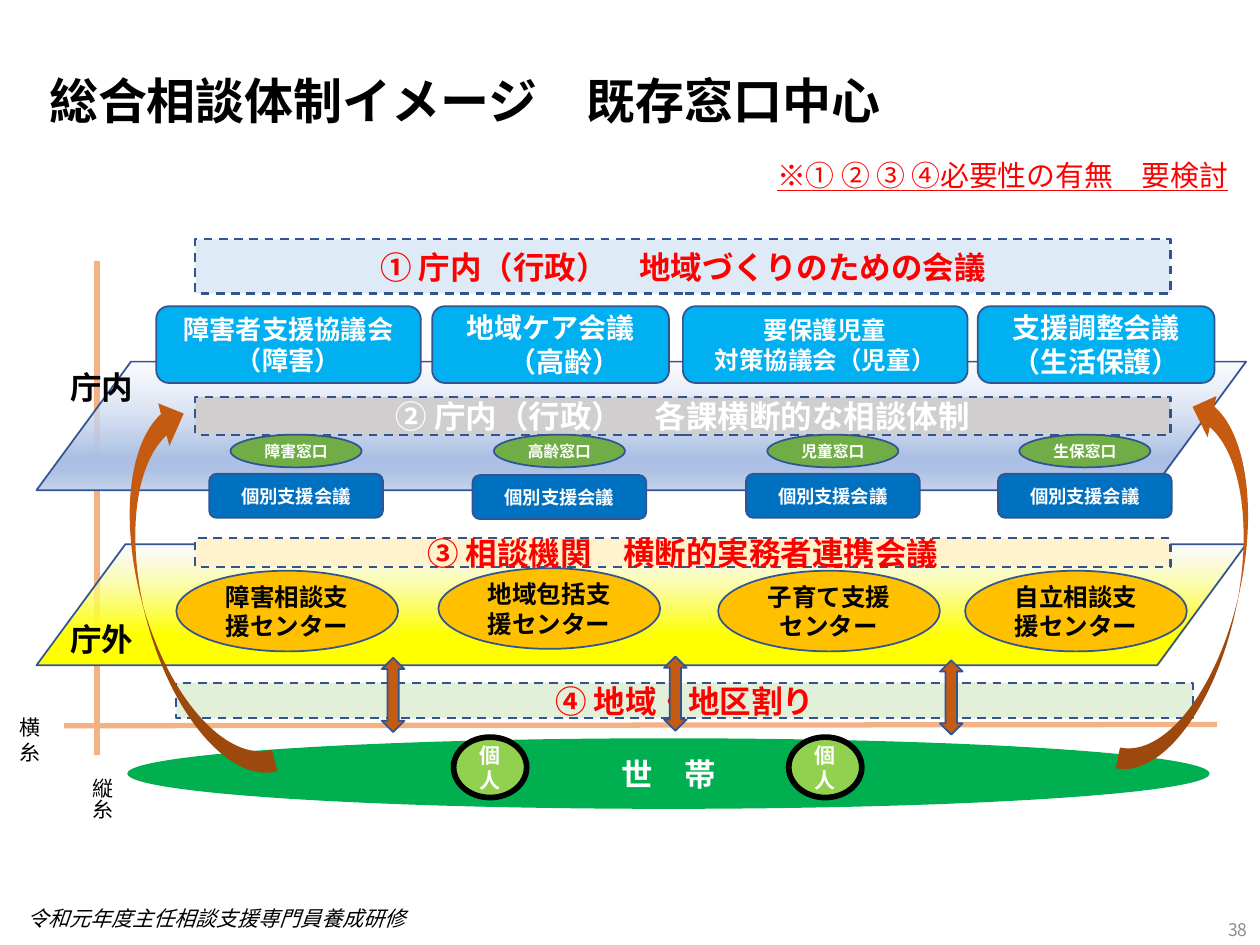
from dataclasses import dataclass

from lxml import etree
from pptx import Presentation
from pptx.dml.color import RGBColor
from pptx.enum.dml import MSO_LINE
from pptx.enum.shapes import MSO_CONNECTOR, MSO_SHAPE
from pptx.enum.text import MSO_ANCHOR, PP_ALIGN
from pptx.oxml.ns import qn
from pptx.util import Emu, Pt

RECT = MSO_SHAPE.RECTANGLE
ROUND = MSO_SHAPE.ROUNDED_RECTANGLE
OVAL = MSO_SHAPE.OVAL
SLANT = MSO_SHAPE.PARALLELOGRAM
CURVE = MSO_SHAPE.CURVED_RIGHT_ARROW
UPDOWN = MSO_SHAPE.UP_DOWN_ARROW
STRAIGHT = MSO_CONNECTOR.STRAIGHT
DASH = MSO_LINE.DASH
LEFT, MID, RIGHT = PP_ALIGN.LEFT, PP_ALIGN.CENTER, PP_ALIGN.RIGHT
TOP, CENTER = MSO_ANCHOR.TOP, MSO_ANCHOR.MIDDLE
SCALE = 9144


@dataclass(frozen=True)
class Theme:
    font: str = "Noto Sans CJK JP"
    latin: str = "Arial"
    ink: str = "000000"
    white: str = "FFFFFF"
    red: str = "FF0000"
    gray: str = "8C8C8C"
    edge: str = "325491"
    thread: str = "F4B183"
    sky: str = "00B0F0"
    blue: str = "0070C0"
    leaf: str = "70AD47"
    gold: str = "FFC000"
    green: str = "00B050"
    lime: str = "92D050"
    rust: str = "C55A11"
    pale: str = "F6F8FC"
    bands: tuple = ("DEEBF7", "D0CECE", "FFF2CC", "E2F0D9")
    inner: tuple = ("ABC0E4", "ABC0E4", "C7D5ED")
    outer: tuple = ("FFFF00", "FFFF00", "FFFF00")
    title: float = 28
    head: float = 18
    note: float = 16.5
    large: float = 16
    wide: float = 15
    body: float = 14
    small: float = 12
    meet: float = 10.5
    page: float = 10
    desk: float = 9


T = Theme()


def px(*nums):
    return [Emu(n * SCALE) for n in nums]


def rgb(code):
    return RGBColor.from_string(code)


def write(shape, text, size, color=T.ink, bold=True, slope=False, under=False,
          align=MID, anchor=CENTER, font=T.font, wrap=True, space=None):
    frame = shape.text_frame
    frame.word_wrap = wrap
    frame.vertical_anchor = anchor
    for i, line in enumerate(text.split("\n")):
        para = frame.add_paragraph() if i else frame.paragraphs[0]
        para.alignment = align
        if space:
            para.line_spacing = space
        run = para.add_run()
        run.text = line
        face = run.font
        face.name, face.size, face.bold = font, Pt(size), bold
        face.italic, face.underline = slope, under
        face.color.rgb = rgb(color)
        east = etree.SubElement(run._r.get_or_add_rPr(), qn("a:ea"))
        east.set("typeface", T.font)


def label(slide, box, text, size, **form):
    shape = slide.shapes.add_textbox(*px(*box))
    write(shape, text, size, **{"align": LEFT, "anchor": TOP, **form})
    return shape


def draw(slide, kind, box, fill, edge=T.edge, width=1.0):
    shape = slide.shapes.add_shape(kind, *px(*box))
    shape.shadow.inherit = False
    shape.fill.solid()
    shape.fill.fore_color.rgb = rgb(fill)
    if edge:
        shape.line.color.rgb = rgb(edge)
        shape.line.width = Pt(width)
    else:
        shape.line.fill.background()
    return shape


def band(slide, box, text, fill, color=T.red):
    shape = draw(slide, RECT, box, fill, width=1.25)
    shape.line.dash_style = DASH
    write(shape, text, T.head, color)


def plane(slide, box, tones):
    shape = draw(slide, SLANT, box, T.pale)
    shape.adjustments[0] = 0.735
    shape.fill.gradient()
    grad = shape._element.spPr.find(qn("a:gradFill"))
    for node in list(grad):
        grad.remove(node)
    stops = etree.SubElement(grad, qn("a:gsLst"))
    for spot, tone in zip((0, 74, 83, 100), (T.pale, *tones)):
        stop = etree.SubElement(stops, qn("a:gs"), pos=str(spot * 1000))
        shade = etree.SubElement(stop, qn("a:srgbClr"), val=tone)
        if spot == 0:
            etree.SubElement(shade, qn("a:alpha"), val="52000")
    etree.SubElement(grad, qn("a:lin"), ang="5400000", scaled="0")


def row(slide, box, kind, fill, items, size, color=T.white):
    left, top, wide, high = box
    for text, mid, shift in items:
        spot = (left + mid - wide // 2, top + shift, wide, high)
        write(draw(slide, kind, spot, fill), text, size, color)


def councils(slide, box):
    left, top, _, high = box
    for text, x, wide, size in (
            ("障害者支援協議会\n（障害）", 0, 210, T.wide),
            ("地域ケア会議\n　（高齢）", 219, 188, T.large),
            ("要保護児童\n対策協議会（児童）", 418, 226, T.body),
            ("支援調整会議\n（生活保護）", 652, 188, T.large)):
        shape = draw(slide, ROUND, (left + x, top, wide, high), T.sky)
        write(shape, text, size, T.white)


def threads(slide, box):
    left, top, wide, high = box
    for ends in ((left + 26, top, left + 26, top + high),
                 (left, top + 369, left + wide, top + 368)):
        line = slide.shapes.add_connector(STRAIGHT, *px(*ends))
        line.line.color.rgb = rgb(T.thread)
        line.line.width = Pt(3)
        etree.SubElement(line._element.spPr, qn("a:effectLst"))


def home(slide, box):
    left, top, _, _ = box
    write(draw(slide, OVAL, box, T.green, None), "世　帯", T.head, T.white)
    for x in (259, 525):
        spot = (left + x, top - 1, 58, 48)
        write(draw(slide, OVAL, spot, T.lime, T.ink, 3.25),
              "個人", T.small, T.white)


def arrows(slide, box):
    left, top, _, _ = box
    for x, y, wide, high, turn, flip in ((0, 5, 70, 311, 165.3, True),
                                         (805, 0, 67, 310, 192, False)):
        shape = draw(slide, CURVE, (left + x, top + y, wide, high), T.rust, None)
        shape.rotation = turn
        if flip:
            shape._element.spPr.xfrm.set("flipH", "1")
    for x, y in ((191, 212), (415, 211), (634, 214)):
        draw(slide, UPDOWN, (left + x, top + y, 18, 59), T.rust)


def heading(slide, box):
    title = slide.shapes.title
    title.left, title.top, title.width, title.height = px(*box)
    write(title, "総合相談体制イメージ　既存窓口中心", T.title,
          align=LEFT, space=0.9)


def chart(slide, box):
    left, top, wide, _ = box
    threads(slide, (left + 51, top + 17, 915, 392))
    band(slide, (left + 140, top + 352, 807, 28), "④ 地域・地区割り", T.bands[3])
    plane(slide, (left + 29, top + 97, 960, 102), T.inner)
    councils(slide, (left + 124, top + 53, 840, 61))
    mids = (235, 444, 661, 861)
    row(slide, (left, top + 186, 138, 35), ROUND, T.blue,
        [("個別支援会議", mid, int(i == 1)) for i, mid in enumerate(mids)], T.meet)
    band(slide, (left + 155, top, 774, 43),
         "① 庁内（行政）　地域づくりのための会議", T.bands[0])
    plane(slide, (left + 29, top + 242, 960, 96), T.outer)
    row(slide, (left, top + 263, 176, 64), OVAL, T.gold,
        (("障害相談支援センター", 228, 0), ("地域包括支援センター", 436, -2),
         ("子育て支援センター", 658, 0), ("自立相談支援センター", 854, 0)),
        T.body, T.ink)
    for text, y in (("庁内", 97), ("庁外", 297)):
        label(slide, (left + 46, top + y, 72, 40), text, T.head)
    home(slide, (left + 101, top + 396, 859, 56))
    arrows(slide, (left + 112, top + 120, 872, 316))
    band(slide, (left + 155, top + 125, 774, 30),
         "② 庁内（行政）　各課横断的な相談体制", T.bands[1], T.white)
    band(slide, (left + 155, top + 237, 774, 23),
         "③ 相談機関　横断的実務者連携会議", T.bands[2])
    desks = ("障害窓口", "高齢窓口", "児童窓口", "生保窓口")
    row(slide, (left, top + 155, 104, 26), OVAL, T.leaf,
        [(text, mid, 0) for text, mid in zip(desks, mids)], T.desk)
    warp = label(slide, (left + 56, top + 418, 40, 58), "縦糸", T.small,
                 bold=False, font=T.latin)
    warp.text_frame._txBody.bodyPr.set("vert", "eaVert")
    label(slide, (left + 6, top + 372, 52, 50), "横糸", T.small,
          bold=False, font=T.latin)


def footer(slide, box):
    left, top, wide, _ = box
    label(slide, (left + 12, top, 394, 30), "令和元年度主任相談支援専門員養成研修",
          T.small, bold=False, slope=True)
    label(slide, (left + wide - 225, top + 11, 225, 25), "38", T.page,
          color=T.gray, bold=False, align=RIGHT, anchor=CENTER)


def main():
    deck = Presentation()
    deck.slide_width, deck.slide_height = px(1000, 750)
    slide = deck.slides.add_slide(deck.slide_layouts[5])
    heading(slide, (29, 56, 712, 53))
    label(slide, (607, 120, 380, 38), "※① ② ③ ④必要性の有無　要検討", T.note,
          color=T.red, bold=False, under=True, font=T.latin, wrap=False)
    chart(slide, (0, 190, 1000, 476))
    footer(slide, (0, 714, 1000, 36))
    deck.save("out.pptx")


if __name__ == "__main__":
    main()
